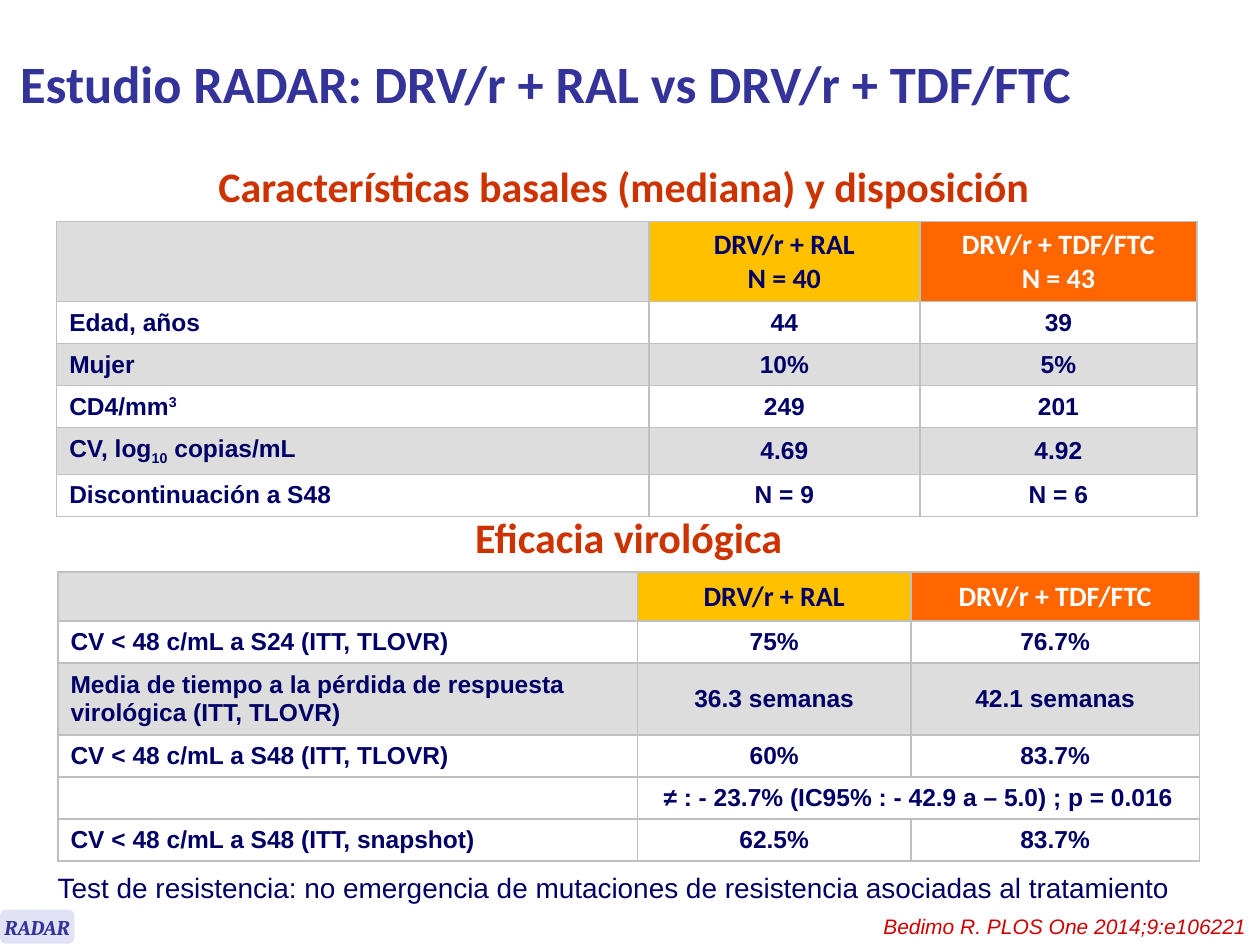
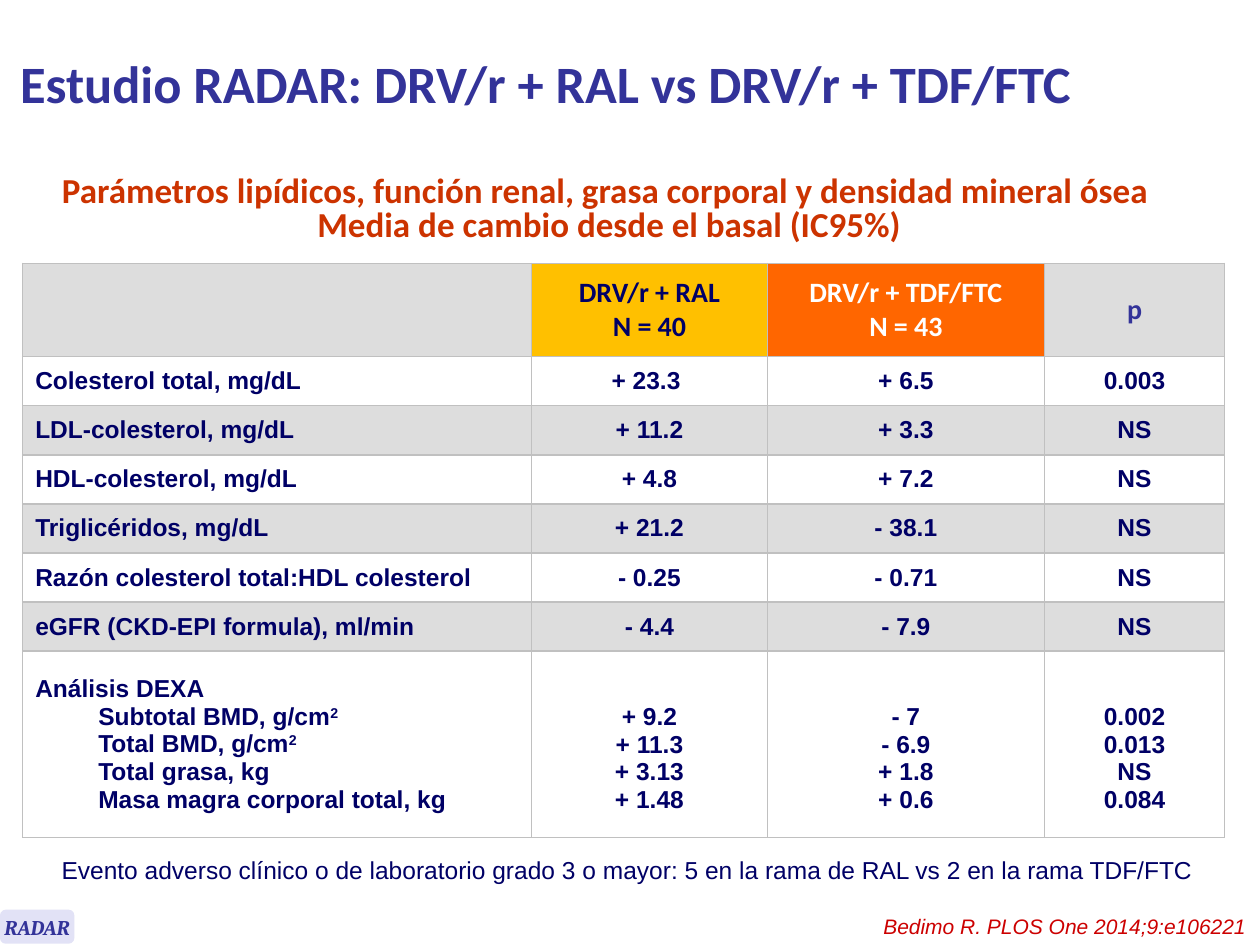
from dataclasses import dataclass

from lxml.etree import SubElement
from pptx import Presentation
from pptx.dml.color import RGBColor
from pptx.enum.shapes import MSO_SHAPE
from pptx.enum.text import MSO_ANCHOR, PP_ALIGN
from pptx.oxml.ns import qn
from pptx.slide import Slide
from pptx.table import _Cell
from pptx.text.text import TextFrame
from pptx.util import Inches, Length, Pt

# Shared colours
NAVY = RGBColor(0x00, 0x00, 0x66)
INDIGO = RGBColor(0x33, 0x33, 0x99)
RUST = RGBColor(0xCC, 0x33, 0x00)
RED = RGBColor(0xCC, 0x00, 0x00)
GOLD = RGBColor(0xFF, 0xC0, 0x00)
ORANGE = RGBColor(0xFF, 0x66, 0x00)
GREY = RGBColor(0xDD, 0xDD, 0xDD)
LILAC = RGBColor(0xE2, 0xE2, 0xF6)
WHITE = RGBColor(0xFF, 0xFF, 0xFF)
BORDER = "C0C0C0"

TITLE = "Estudio RADAR: DRV/r + RAL vs DRV/r + TDF/FTC"
SOURCE = "Bedimo R. PLOS One 2014;9:e106221"
SHIFT = {"+": "30000", "-": "-25000"}  # raised and lowered text
LINE = Inches(0.22)  # height of one line in a table body


@dataclass(frozen=True)
class Box:
    left: float
    top: float
    width: float
    height: float

    def place(self) -> tuple[Length, ...]:
        return tuple(Inches(n) for n in
                     (self.left, self.top, self.width, self.height))


@dataclass(frozen=True)
class Head:
    text: str
    fill: RGBColor
    color: RGBColor


@dataclass(frozen=True)
class Grid:
    """A table; lines in a cell are split by newlines."""
    left: float
    top: float
    cols: tuple[float, ...]
    heights: tuple[float, ...]
    heads: tuple[Head, ...]
    rows: tuple[tuple[str, ...], ...]
    shaded: tuple[int, ...]


def arms(*counts: str) -> tuple[Head, ...]:
    """Headers of the two study arms, with patient counts if given."""
    names = ("DRV/r + RAL", "DRV/r + TDF/FTC")
    texts = ["\n".join(pair) for pair in zip(names, counts)] or names
    return (Head("", GREY, NAVY), Head(texts[0], GOLD, NAVY),
            Head(texts[1], ORANGE, WHITE))


BASE = Grid(
    0.45, 1.76, (4.7, 2.15, 2.2), (0.63, 0.33, 0.33, 0.33, 0.37, 0.33),
    arms("N = 40", "N = 43"),
    (("Edad, años", "44", "39"),
     ("Mujer", "10%", "5%"),
     ("CD4/mm|+3", "249", "201"),
     ("CV, log|-10| copias/mL", "4.69", "4.92"),
     ("Discontinuación a S48", "N = 9", "N = 6")),
    (2, 4))

EFFECT = Grid(
    0.46, 4.54, (4.6, 2.17, 2.29), (0.39, 0.33, 0.57, 0.33, 0.33, 0.33),
    arms(),
    (("CV < 48 c/mL a S24 (ITT, TLOVR)", "75%", "76.7%"),
     ("Media de tiempo a la pérdida de respuesta virológica (ITT, TLOVR)",
      "36.3 semanas", "42.1 semanas"),
     ("CV < 48 c/mL a S48 (ITT, TLOVR)", "60%", "83.7%"),
     ("", "≠ : - 23.7% (IC95% : - 42.9 a – 5.0) ; p = 0.016"),
     ("CV < 48 c/mL a S48 (ITT, snapshot)", "62.5%", "83.7%")),
    (2,))

CHANGE = Grid(
    0.18, 2.09, (4.04, 1.87, 2.2, 1.43), (0.74, *[0.39] * 6, 1.48),
    (*arms("N = 40", "N = 43"), Head("p", GREY, INDIGO)),
    (("Colesterol total, mg/dL", "+ 23.3 ", "+ 6.5", "0.003"),
     ("LDL-colesterol, mg/dL", "+ 11.2", "+ 3.3", "NS"),
     ("HDL-colesterol, mg/dL", "+ 4.8", "+ 7.2", "NS"),
     ("Triglicéridos, mg/dL", "+ 21.2", "- 38.1", "NS"),
     ("Razón colesterol total:HDL colesterol", "- 0.25", "- 0.71", "NS"),
     ("eGFR (CKD-EPI formula), ml/min", "- 4.4", "- 7.9", "NS"),
     ("Análisis DEXA\nSubtotal BMD, g/cm|+2\nTotal BMD, g/cm|+2\n"
      "Total grasa, kg\nMasa magra corporal total, kg",
      "+ 9.2\n+ 11.3\n+ 3.13\n+ 1.48",
      "- 7\n- 6.9\n+ 1.8\n+ 0.6",
      "0.002\n0.013\nNS\n0.084")),
    (2, 4, 6))


def write(frame: TextFrame, text: str, *, size: float, color: RGBColor,
          font: str = "Arial", bold: bool = False, slant: bool = False,
          align: PP_ALIGN = PP_ALIGN.LEFT, pitch: Length | None = None,
          gap: Length | None = None, inset: Length | None = None) -> None:
    """Fill a frame; odd parts between bars are raised (+) or lowered (-)."""
    for row, line in enumerate(text.split("\n")):
        para = frame.add_paragraph() if row else frame.paragraphs[0]
        para.alignment = align
        if pitch:
            para.line_spacing = pitch
        if row and gap:
            para.space_before = gap
        if row and inset:
            para.level = 1
            props = para._p.get_or_add_pPr()
            props.set("marL", str(inset))
            props.set("indent", "0")
        for spot, part in enumerate(line.split("|")):
            run = para.add_run()
            run.text = part[1:] if spot % 2 else part
            run.font.name, run.font.size = font, Pt(size)
            run.font.bold, run.font.italic = bold, slant
            run.font.color.rgb = color
            if spot % 2:
                run.font._element.set("baseline", SHIFT[part[0]])


def add_text(slide: Slide, box: Box, text: str, *, wrap: bool = True,
             anchor: MSO_ANCHOR = MSO_ANCHOR.TOP, **style) -> None:
    frame = slide.shapes.add_textbox(*box.place()).text_frame
    frame.word_wrap = wrap
    frame.vertical_anchor = anchor
    write(frame, text, **style)


def add_head(slide: Slide, box: Box, text: str, size: float = 24,
             **style) -> None:
    """Centred rust heading above a table."""
    add_text(slide, box, text, size=size, color=RUST, font="Calibri",
             bold=True, align=PP_ALIGN.CENTER, pitch=Pt(15.2),
             gap=Pt(size * 0.2), **style)


def paint(cell: _Cell, fill: RGBColor) -> None:
    """Set the fill and thin borders of a cell."""
    cell.fill.solid()
    cell.fill.fore_color.rgb = fill
    cell.vertical_anchor = MSO_ANCHOR.MIDDLE
    props = cell._tc.get_or_add_tcPr()
    for spot, side in enumerate(("lnL", "lnR", "lnT", "lnB")):
        edge = SubElement(props, qn(f"a:{side}"), w=str(Pt(1)))
        ink = SubElement(edge, qn("a:solidFill"))
        SubElement(ink, qn("a:srgbClr"), val=BORDER)
        props.insert(spot, edge)


def fill_cell(cell: _Cell, text: str, **style) -> None:
    if text:
        write(cell.text_frame, text, bold=True, **style)
    else:
        cell.margin_top = cell.margin_bottom = 0


def add_grid(slide: Slide, grid: Grid) -> None:
    box = Box(grid.left, grid.top, sum(grid.cols), sum(grid.heights))
    table = slide.shapes.add_table(len(grid.heights), len(grid.cols),
                                   *box.place()).table
    table.horz_banding = False
    for col, width in zip(table.columns, grid.cols):
        col.width = Inches(width)
    for row, height in zip(table.rows, grid.heights):
        row.height = Inches(height)

    # Header row
    for col, head in enumerate(grid.heads):
        cell = table.cell(0, col)
        paint(cell, head.fill)
        fill_cell(cell, head.text, size=16, font="Calibri",
                  color=head.color, align=PP_ALIGN.CENTER)

    # Body rows
    for row, texts in enumerate(grid.rows, 1):
        for col in range(len(grid.cols)):
            paint(table.cell(row, col),
                  GREY if row in grid.shaded else WHITE)
        for col, text in enumerate(texts):
            cell = table.cell(row, col)
            fill_cell(cell, text, size=14, color=NAVY, inset=None if col
                      else Inches(0.5), align=PP_ALIGN.CENTER if col
                      else PP_ALIGN.LEFT)
            # Values start one line below a label that heads a group
            if col and "\n" in text:
                cell.margin_top = Inches(0.05) + LINE
        if len(texts) < len(grid.cols):
            table.cell(row, len(texts) - 1).merge(
                table.cell(row, len(grid.cols) - 1))


def add_slide(deck) -> Slide:
    """Slide with the shared title, study tag and citation."""
    slide = deck.slides.add_slide(deck.slide_layouts[5])
    title = slide.shapes.title
    title.left, title.top, title.width, title.height = Box(
        0.06, 0.05, 8.96, 1.21).place()
    title.text_frame.vertical_anchor = MSO_ANCHOR.MIDDLE
    write(title.text_frame, TITLE, size=30, font="Calibri", color=INDIGO,
          bold=True)

    add_text(slide, Box(6.84, 7.2, 3.15, 0.3), SOURCE, wrap=False, size=12,
             color=RED, slant=True, align=PP_ALIGN.RIGHT)

    tag = slide.shapes.add_shape(MSO_SHAPE.ROUNDED_RECTANGLE,
                                 *Box(0, 7.22, 0.59, 0.27).place())
    tag.shadow.inherit = False
    tag.fill.solid()
    tag.fill.fore_color.rgb = LILAC
    tag.line.fill.background()
    tag.text_frame.word_wrap = False
    tag.text_frame.vertical_anchor = MSO_ANCHOR.MIDDLE
    write(tag.text_frame, "RADAR", size=12, font="Cambria", color=INDIGO,
          bold=True, slant=True, align=PP_ALIGN.CENTER)
    return slide


def main() -> None:
    deck = Presentation()
    deck.slide_width, deck.slide_height = Inches(10), Inches(7.5)

    # Baseline and efficacy
    slide = add_slide(deck)
    middle = {"wrap": False, "anchor": MSO_ANCHOR.MIDDLE}
    add_head(slide, Box(1.63, 1.39, 6.72, 0.35),
             "Características basales (mediana) y disposición ", **middle)
    add_grid(slide, BASE)
    add_head(slide, Box(3.65, 4.18, 2.68, 0.35), "Eficacia virológica",
             **middle)
    add_grid(slide, EFFECT)
    add_text(slide, Box(0.36, 6.86, 9.05, 0.37),
             "Test de resistencia: no emergencia de mutaciones de "
             "resistencia asociadas al tratamiento", size=16, color=NAVY)

    # Lipids, kidney and bone
    slide = add_slide(deck)
    add_head(slide, Box(-0.24, 1.41, 10.15, 0.59),
             "Parámetros lipídicos, función renal, grasa corporal y densidad "
             "mineral ósea \nMedia de cambio desde el basal (IC95%)", 20)
    add_grid(slide, CHANGE)
    add_text(slide, Box(0.39, 6.74, 9.6, 0.34),
             "Evento adverso clínico o de laboratorio grado 3 o mayor: 5 en "
             "la rama de RAL vs 2 en la rama TDF/FTC", size=14, color=NAVY)

    deck.save("out.pptx")


if __name__ == "__main__":
    main()
